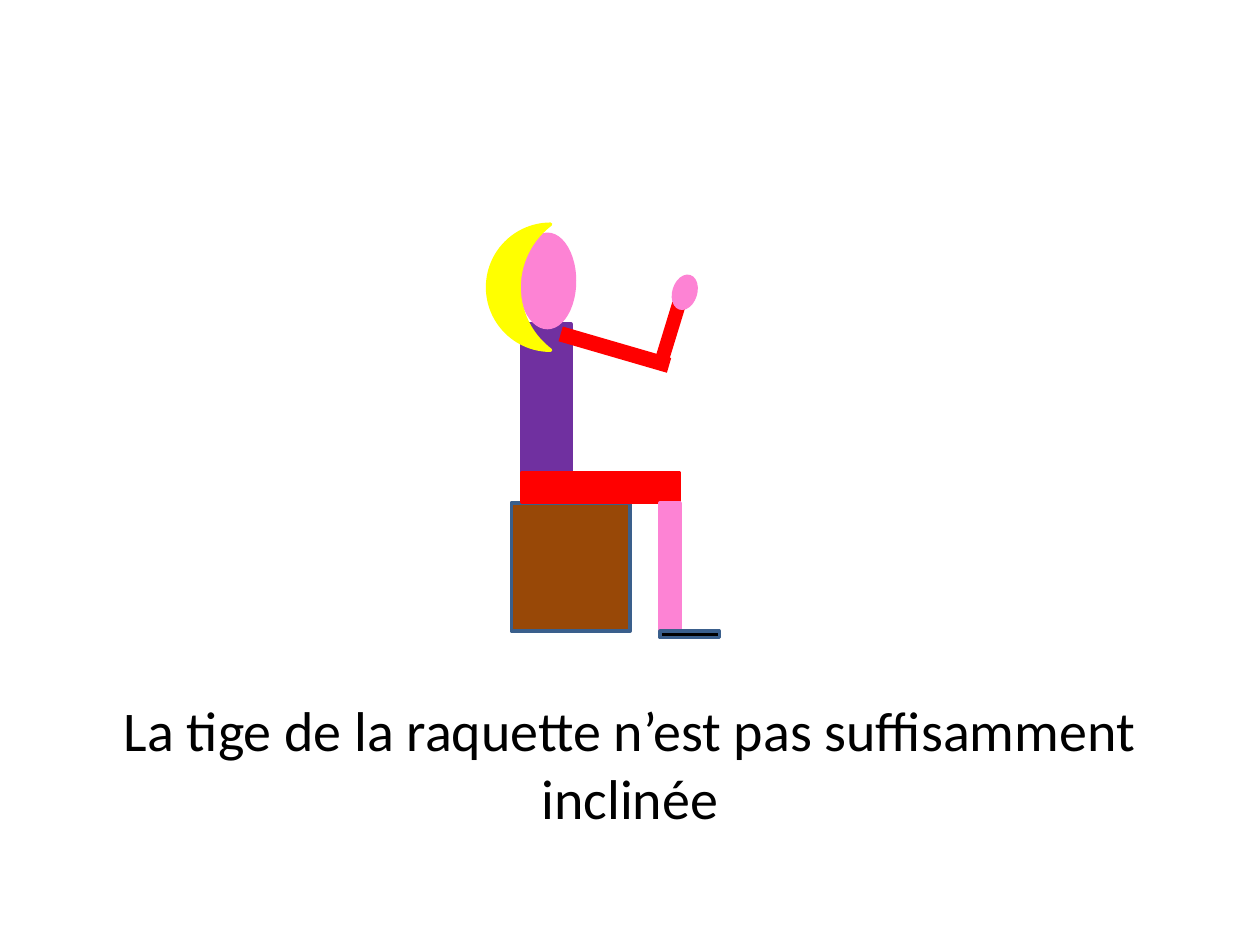
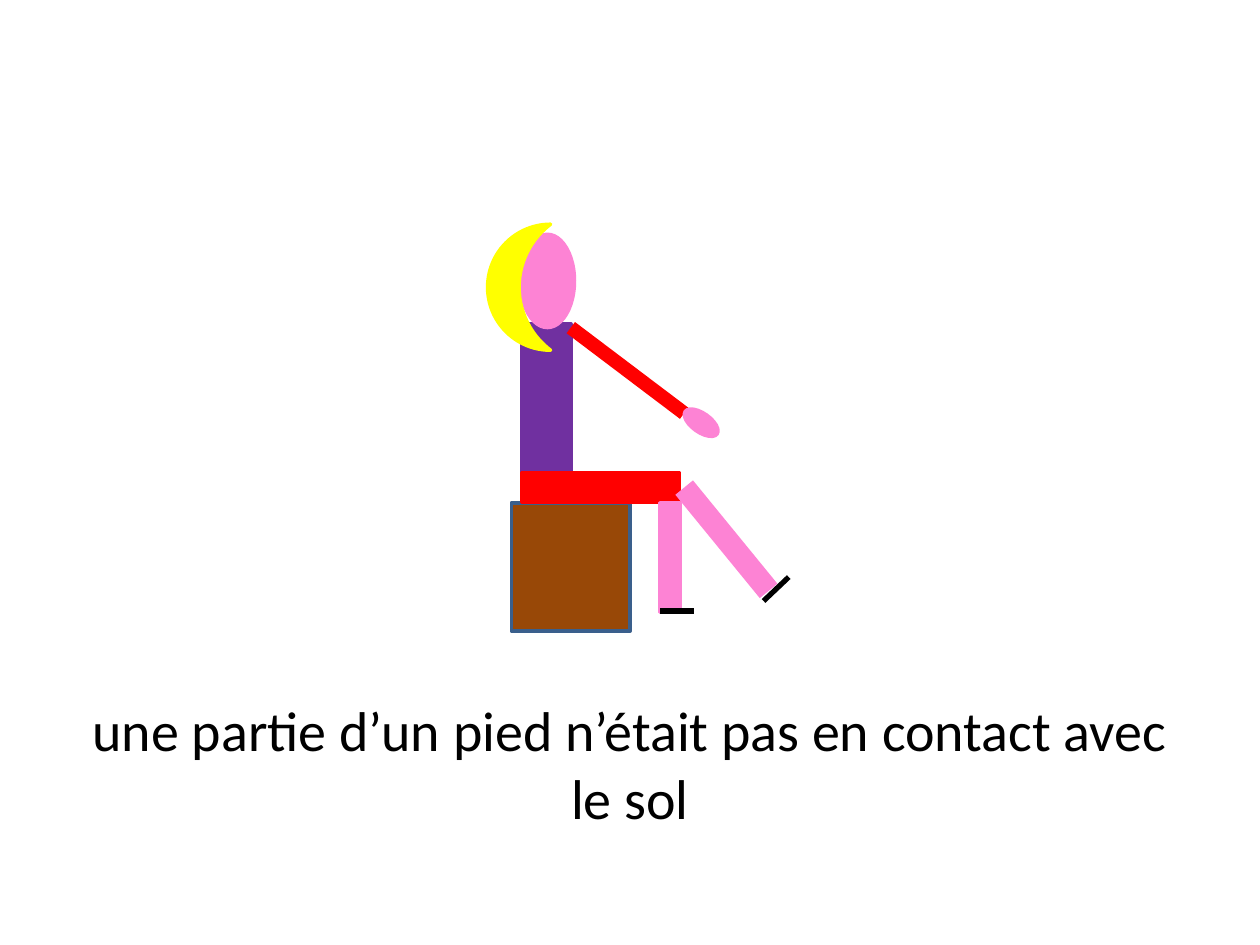
from dataclasses import dataclass

from lxml import etree
from pptx import Presentation
from pptx import util as u
from pptx.dml.color import RGBColor
from pptx.enum import shapes, text
from pptx.oxml import ns

BLACK = RGBColor(0x00, 0x00, 0x00)
WOOD = RGBColor(0x98, 0x48, 0x07)
EDGE = RGBColor(0x3A, 0x5F, 0x8C)
PURPLE = RGBColor(0x70, 0x30, 0xA0)
RED = RGBColor(0xFF, 0x00, 0x00)
SKIN = RGBColor(0xFD, 0x83, 0xD4)
BLOND = RGBColor(0xFF, 0xFF, 0x00)

SLIDE_WIDTH = u.Inches(10)
SLIDE_HEIGHT = u.Inches(7.5)
CELL = SLIDE_WIDTH // 1000

RECTANGLE = shapes.MSO_SHAPE.RECTANGLE
OVAL = shapes.MSO_SHAPE.OVAL
MOON = shapes.MSO_SHAPE.MOON

TITLE_FRAME = {
    "word_wrap": True,
    "auto_size": text.MSO_AUTO_SIZE.NONE,
    "vertical_anchor": text.MSO_ANCHOR.BOTTOM,
    "margin_bottom": u.Inches(0.31),
}
TITLE_FONT = {"name": "Calibri", "size": u.Pt(32)}


@dataclass
class Box:
    left: int
    top: int

    def across(self, column):
        return self.left + column * CELL

    def down(self, row):
        return self.top + row * CELL


FIGURE_BOX = Box(387 * CELL, 178 * CELL)


def set_values(target, values):
    for name, value in values.items():
        setattr(target, name, value)


def add_part(page, box, kind, cells, color, edge=None, rotation=0):
    column, row, columns, rows = cells
    part = page.shapes.add_shape(
        kind, box.across(column), box.down(row), columns * CELL, rows * CELL
    )
    part.shadow.inherit = False
    part.rotation = rotation
    part.fill.solid()
    part.fill.fore_color.rgb = color
    part.line.color.rgb = edge or color
    part.line.width = u.Pt(2)


def add_limb(page, box, start, end, color, width):
    limb = page.shapes.add_connector(
        shapes.MSO_CONNECTOR.STRAIGHT,
        box.across(start[0]), box.down(start[1]),
        box.across(end[0]), box.down(end[1]),
    )
    limb.line.color.rgb = color
    limb.line.width = u.Pt(width)
    etree.SubElement(limb._element.spPr, ns.qn("a:effectLst"))


def add_title(page, wording):
    title = page.shapes.title
    set_values(title, {
        "left": int(SLIDE_WIDTH * 0.05),
        "top": int(SLIDE_HEIGHT * 0.04),
        "width": int(SLIDE_WIDTH * 0.9),
        "height": int(SLIDE_HEIGHT * 0.88),
    })
    frame = title.text_frame
    set_values(frame, TITLE_FRAME)
    para = frame.paragraphs[0]
    para.alignment = text.PP_ALIGN.CENTER
    span = para.add_run()
    span.text = wording
    set_values(span.font, TITLE_FONT)
    span.font.color.rgb = BLACK


def add_seated_body(page, box, shin_rows):
    add_part(page, box, RECTANGLE, (19, 221, 94, 102), WOOD, EDGE)
    add_part(page, box, RECTANGLE, (27, 79, 39, 142), PURPLE)
    add_part(page, box, RECTANGLE, (27, 197, 125, 24), RED)
    add_part(page, box, RECTANGLE, (137, 221, 16, shin_rows), SKIN)
    add_part(page, box, OVAL, (26, 8, 43, 74), SKIN)
    add_part(page, box, MOON, (0, 0, 50, 100), BLOND)


def add_raised_arm(page, box):
    add_seated_body(page, box, shin_rows=102)
    add_part(page, box, RECTANGLE, (137, 323, 47, 5), BLACK, EDGE)
    add_limb(page, box, (58, 87), (144, 112), RED, 8.75)
    add_limb(page, box, (137, 112), (152, 63), RED, 8)
    add_part(page, box, OVAL, (148, 41, 17, 26), SKIN, rotation=17.5)


def add_lifted_foot(page, box):
    add_seated_body(page, box, shin_rows=87)
    add_limb(page, box, (156, 209), (223, 291), SKIN, 13)
    add_limb(page, box, (219, 299), (239, 280), BLACK, 3)
    add_limb(page, box, (137, 307), (164, 307), BLACK, 3)
    add_limb(page, box, (66, 82), (156, 150), RED, 8)
    add_part(page, box, OVAL, (154, 150, 31, 15), SKIN, rotation=35.2)


POSTURES = [
    ("La tige de la raquette n’est pas suffisamment inclinée", add_raised_arm),
    ("une partie d’un pied n’était pas en contact avec le sol", add_lifted_foot),
]


def main():
    deck = Presentation()
    deck.slide_width = SLIDE_WIDTH
    deck.slide_height = SLIDE_HEIGHT
    title_only = deck.slide_layouts[5]
    for wording, add_figure in POSTURES:
        page = deck.slides.add_slide(title_only)
        add_title(page, wording)
        add_figure(page, FIGURE_BOX)
    deck.save("out.pptx")


if __name__ == "__main__":
    main()
